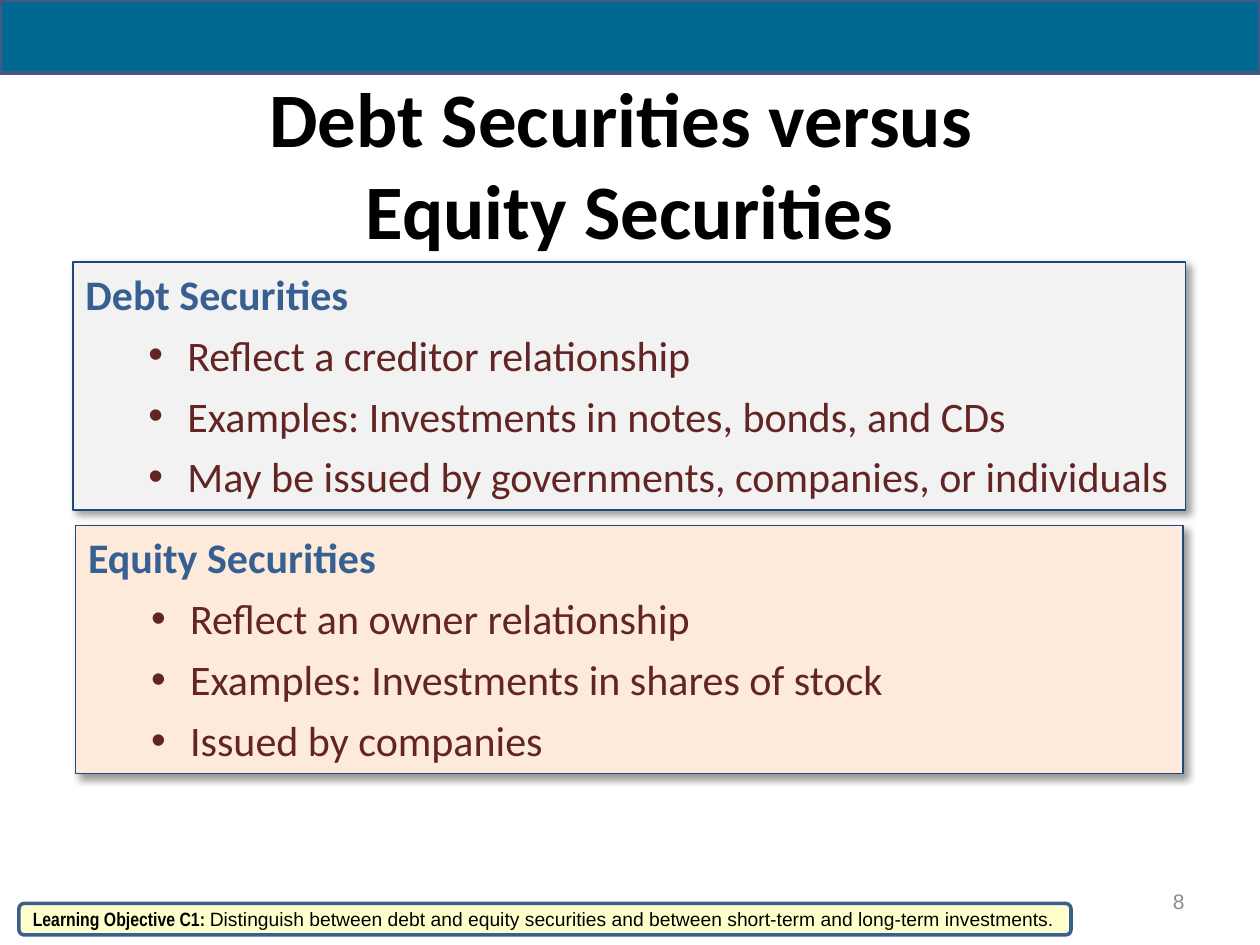
from lxml import etree
from pptx import Presentation
from pptx import util as u
from pptx.dml.color import RGBColor
from pptx.enum import shapes, text
from pptx.oxml.ns import qn

COLS, ROWS = 100, 75  # grid over a 10 x 7.5 inch slide
LEFT, CENTER, RIGHT = text.PP_ALIGN.LEFT, text.PP_ALIGN.CENTER, text.PP_ALIGN.RIGHT


def rgb(hex_):
    return RGBColor.from_string(hex_)


class Deck:
    font, ink, head, body, edge = "Calibri", "000000", "376092", "632523", "1F497D"

    def __init__(self):
        self.prs = Presentation()
        self.prs.slide_width, self.prs.slide_height = u.Inches(10), u.Inches(7.5)
        self.s = self.prs.slides.add_slide(self.prs.slide_layouts[6])

    def at(self, x, y, w, h):
        cw, rh = self.prs.slide_width / COLS, self.prs.slide_height / ROWS
        return [round(v) for v in (x * cw, y * rh, w * cw, h * rh)]

    def run(self, p, words, size, color=ink, bold=False, font=font):
        r = p.add_run()
        r.text = words
        r.font.name, r.font.size, r.font.bold = font, u.Pt(size), bold
        r.font.color.rgb = rgb(color)

    def frame(self, sp, align=LEFT, anchor=text.MSO_ANCHOR.MIDDLE):
        tf = sp.text_frame
        tf.word_wrap, tf.vertical_anchor = True, anchor
        tf.paragraphs[0].alignment = align
        return tf

    def label(self, box, align):
        return self.frame(self.s.shapes.add_textbox(*self.at(*box)), align).paragraphs[0]

    def shape(self, box, fill, line, width, kind=shapes.MSO_SHAPE.RECTANGLE):
        sp = self.s.shapes.add_shape(kind, *self.at(*box))
        sp.fill.solid()
        sp.fill.fore_color.rgb = rgb(fill)
        sp.line.color.rgb, sp.line.width = rgb(line), u.Pt(width)
        sp.shadow.inherit = False
        return sp

    def drop_shadow(self, sp):
        effects = sp._element.spPr.find(qn("a:effectLst"))
        shadow = etree.SubElement(effects, qn("a:outerShdw"), blurRad=str(u.Pt(4)),
                                  dist=str(u.Pt(3)), dir=str(45 * 60000),
                                  algn="tl", rotWithShape="0")
        color = etree.SubElement(shadow, qn("a:srgbClr"), val="000000")
        etree.SubElement(color, qn("a:alpha"), val="40000")

    def bullet(self, p):
        p.level = 1
        pPr = p._p.get_or_add_pPr()
        pPr.set("marL", str(u.Inches(0.81)))
        pPr.set("indent", str(u.Inches(-0.31)))
        etree.SubElement(pPr, qn("a:buFont"), typeface="Arial")
        etree.SubElement(pPr, qn("a:buChar"), char="•")

    def panel(self, box, fill, heading, points):
        sp = self.shape(box, fill, self.edge, 1)
        self.drop_shadow(sp)
        tf = self.frame(sp, anchor=text.MSO_ANCHOR.TOP)
        self.run(tf.paragraphs[0], heading, 24, self.head, True)
        for point in points:
            p = tf.add_paragraph()
            p.alignment = LEFT
            self.run(p, point, 24, self.body)
        for i, p in enumerate(tf.paragraphs):
            p.space_before = u.Pt(6)
            if i:
                self.bullet(p)


def main():
    d = Deck()

    # Title
    p = d.label((5, 5.8, 90, 14.2), CENTER)
    d.run(p, "Debt Securities versus ", 44, bold=True)
    p.add_line_break()
    d.run(p, "Equity Securities", 44, bold=True)

    # The two kinds of securities
    d.panel((5.8, 20.8, 88.3, 19.7), "F2F2F2", "Debt Securities", [
        "Reflect a creditor relationship",
        "Examples: Investments in notes, bonds, and CDs",
        "May be issued by governments, companies, or individuals"])
    d.panel((6, 41.7, 87.9, 19.7), "FDEADA", "Equity Securities", [
        "Reflect an owner relationship",
        "Examples: Investments in shares of stock",
        "Issued by companies"])

    # Top band
    d.shape((0, 0, COLS, 5.8), "006991", "475785", 2.25)

    # Slide number
    d.run(d.label((71.7, 69.5, 23.3, 4), RIGHT), "8", 12, "8C8C8C", font="Arial")

    # Learning objective
    sp = d.shape((1.5, 71.7, 83.5, 2.5), "FFFFCC", "3A5F8C", 2,
                 shapes.MSO_SHAPE.ROUNDED_RECTANGLE)
    p = d.frame(sp).paragraphs[0]
    d.run(p, "Learning Objective C1: ", 11, bold=True, font="Arial Narrow")
    d.run(p, "Distinguish between debt and equity securities and between "
             "short-term and long-term investments.", 11, font="Arial")

    d.prs.save("out.pptx")


if __name__ == "__main__":
    main()
